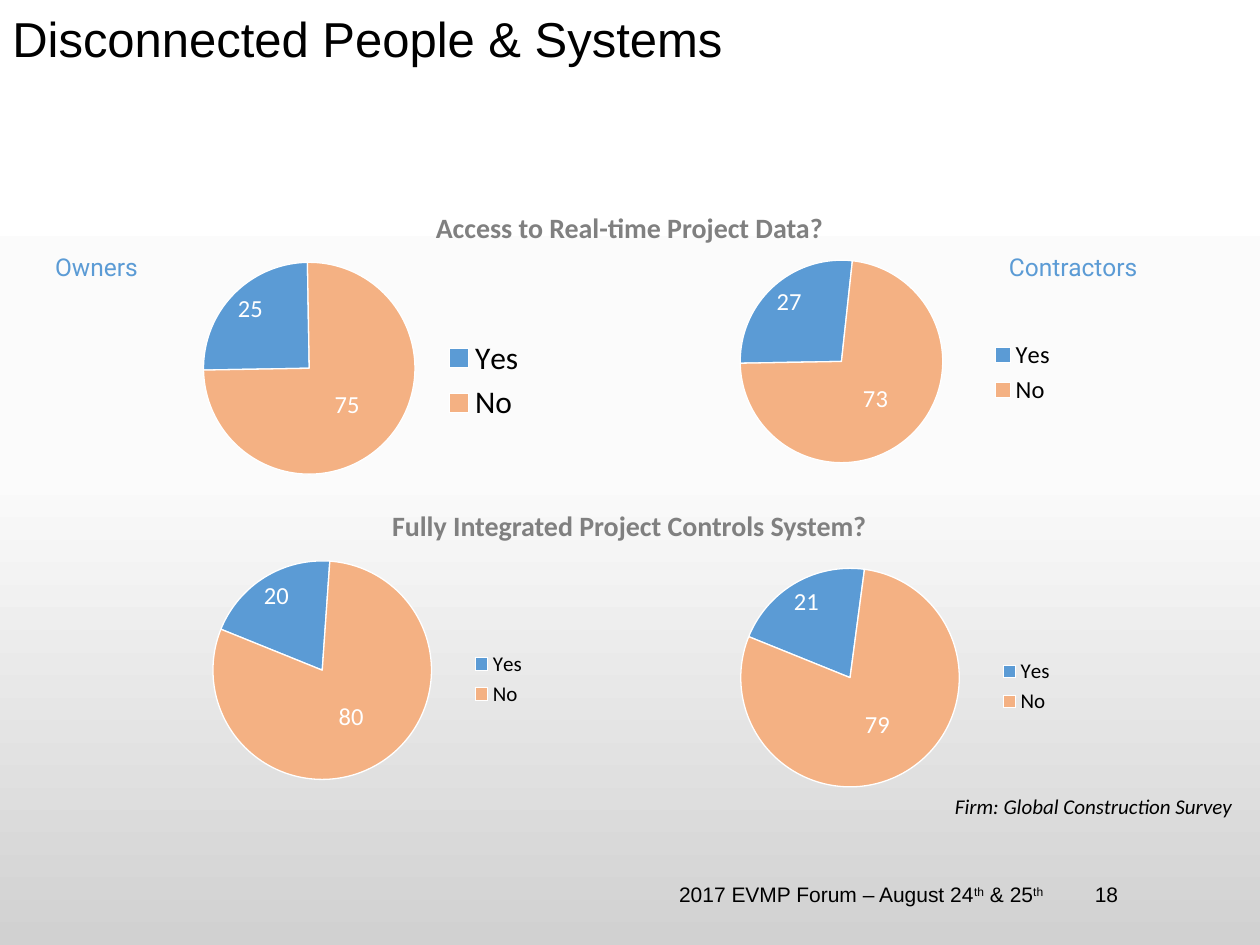
import copy
from dataclasses import dataclass

import lxml.etree
import pptx
import pptx.chart.data
import pptx.dml.color
import pptx.enum.chart
import pptx.enum.text
import pptx.oxml.ns
import pptx.util

Cm, Pt = pptx.util.Cm, pptx.util.Pt
RGB = pptx.dml.color.RGBColor.from_string
qn = pptx.oxml.ns.qn
ALIGN = pptx.enum.text.PP_ALIGN
LABEL = pptx.enum.chart.XL_LABEL_POSITION


@dataclass(frozen=True)
class Theme:
    black: str = "000000"
    white: str = "FFFFFF"
    grey: str = "808080"
    yes: str = "5B9BD5"
    no: str = "F4B183"
    background: tuple = ((0, "FFFFFF"), (0.5, "FBFBFB"), (1, "D1D1D1"))
    title: int = 28
    legend: int = 18
    heading: int = 16
    label: int = 14
    small: int = 12


theme = Theme()
STYLES = {
    "title": {"name": "Arial", "size": theme.title, "color": theme.black},
    "heading": {"name": "Calibri", "size": theme.heading, "color": theme.grey, "bold": True},
    "group": {"name": "Roboto", "size": theme.label, "color": theme.yes},
    "source": {"name": "Calibri", "size": theme.small, "color": theme.black, "italic": True},
    "footer": {"name": "Arial", "size": theme.small, "color": theme.black},
    "chart": {"name": "Calibri", "size": theme.legend, "color": theme.black},
    "value": {"name": "Calibri", "size": theme.label, "color": theme.white},
}


def format_font(font, values):
    for name, value in values.items():
        if name == "color":
            font.color.rgb = RGB(value)
        else:
            setattr(font, name, Pt(value) if name == "size" else value)


def set_plot_layout(chart, bounds):
    """Fix the inner plot area, given as fractions of the chart frame."""
    plot_area = chart.element.find(".//" + qn("c:plotArea"))
    for layout in plot_area.findall(qn("c:layout")):
        plot_area.remove(layout)
    layout = lxml.etree.Element(qn("c:layout"))
    manual = lxml.etree.SubElement(layout, qn("c:manualLayout"))
    settings = [("layoutTarget", "inner"), ("xMode", "edge"), ("yMode", "edge")]
    for tag, value in settings + list(zip("xywh", bounds)):
        lxml.etree.SubElement(manual, qn("c:" + tag)).set("val", str(value))
    plot_area.insert(0, layout)


presentation = pptx.Presentation()
presentation.slide_width, presentation.slide_height = Cm(25.4), Cm(19.05)
slide = presentation.slides.add_slide(presentation.slide_layouts[6])

# Background gradient, top to bottom
fill = slide.background.fill
fill.gradient()
fill.gradient_angle = 270
stop_list = slide.element.find(".//" + qn("a:gsLst"))
stop_list.append(copy.deepcopy(stop_list[0]))
for stop, (position, color) in zip(fill.gradient_stops, theme.background):
    stop.position = position
    stop.color.rgb = RGB(color)

# Pie charts: frame, plot bounds, first angle, legend size, yes and no
lower_plot = (0.03, 0.03, 0.65, 0.87)
pies = [
    ((4.09, 4.95, 6.78, 5.44), (0, 0.06, 0.63, 0.79), 269, theme.legend, (25, 75)),
    ((14.5, 4.8, 7.04, 5.41), (0.06, 0.08, 0.58, 0.76), 269, theme.label, (27, 73)),
    ((4.09, 11.15, 6.78, 5.08), lower_plot, 292, theme.small, (20, 80)),
    ((14.73, 11.3, 6.78, 5.08), lower_plot, 292, theme.small, (21, 79)),
]
for frame, bounds, angle, legend_size, values in pies:
    data = pptx.chart.data.CategoryChartData()
    data.categories = ["Yes", "No"]
    data.add_series("Series 1", values)
    chart = slide.shapes.add_chart(
        pptx.enum.chart.XL_CHART_TYPE.PIE, *map(Cm, frame), data).chart
    format_font(chart.font, STYLES["chart"])
    chart.has_title = False
    chart.has_legend = True
    chart.legend.position = pptx.enum.chart.XL_LEGEND_POSITION.RIGHT
    chart.legend.include_in_layout = False
    format_font(chart.legend.font, {**STYLES["chart"], "size": legend_size})
    set_plot_layout(chart, bounds)

    plot = chart.plots[0]
    plot.vary_by_categories = True
    pie = chart.element.find(".//" + qn("c:pieChart"))
    for old_angle in pie.findall(qn("c:firstSliceAng")):
        pie.remove(old_angle)
    lxml.etree.SubElement(pie, qn("c:firstSliceAng")).set("val", str(angle))

    series = plot.series[0]
    series.data_labels.show_value = True
    no_label = series.points[1].data_label
    for labels, position in ((series.data_labels, LABEL.BEST_FIT), (no_label, LABEL.CENTER)):
        format_font(labels.font, STYLES["value"])
        labels.position = position
    for index, color in enumerate((theme.yes, theme.no)):
        point = series.points[index].format
        point.fill.solid()
        point.fill.fore_color.rgb = RGB(color)
        point.line.color.rgb = RGB(theme.white)
        point.line.width = Pt(0.75)

# Text: style, frame, alignment, runs (every second run is raised)
texts = [
    ("title", (0, 0.18, 20.88, 1.63), ALIGN.LEFT, ["Disconnected People & Systems"]),
    ("heading", (6.2, 4.11, 12.98, 0.94), ALIGN.CENTER, ["Access to Real-time Project Data?"]),
    ("heading", (6.2, 10.13, 12.98, 0.94), ALIGN.CENTER,
     ["Fully Integrated Project Controls System?"]),
    ("group", (0.86, 4.95, 2.84, 0.86), ALIGN.LEFT, ["Owners"]),
    ("group", (20.09, 4.95, 3.43, 0.86), ALIGN.LEFT, ["Contractors"]),
    ("source", (12.09, 15.88, 13, 0.76), ALIGN.RIGHT, ["Firm: Global Construction Survey"]),
    ("footer", (13.44, 17.65, 8.36, 1.02), ALIGN.LEFT,
     ["2017 EVMP Forum – August 24", "th", " & 25", "th"]),
    ("footer", (21.82, 17.65, 1.83, 1.02), ALIGN.LEFT, ["18"]),
]
for style, frame, alignment, runs in texts:
    text_frame = slide.shapes.add_textbox(*map(Cm, frame)).text_frame
    text_frame.word_wrap = True
    paragraph = text_frame.paragraphs[0]
    paragraph.alignment = alignment
    if style == "title":
        paragraph.line_spacing = 0.9
    for index, text in enumerate(runs):
        run = paragraph.add_run()
        run.text = text
        format_font(run.font, STYLES[style])
        if index % 2:
            run._r.get_or_add_rPr().set("baseline", "30000")

presentation.save("out.pptx")
